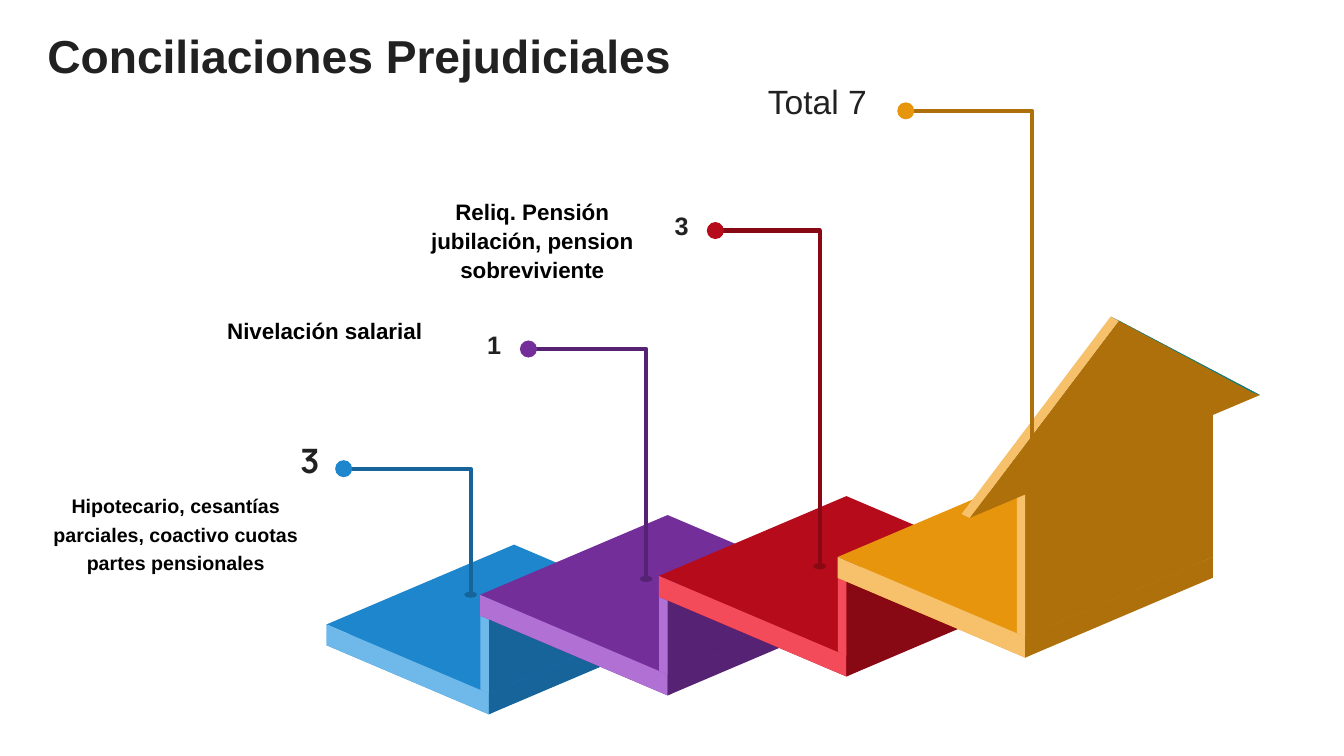
from pptx import Presentation
from pptx.dml.color import RGBColor
from pptx.enum.shapes import MSO_SHAPE
from pptx.enum.text import MSO_ANCHOR, MSO_AUTO_SIZE, PP_ALIGN
from pptx.util import Pt

OVAL = MSO_SHAPE.OVAL
TOP, BOTTOM = MSO_ANCHOR.TOP, MSO_ANCHOR.BOTTOM
LEFT, CENTER, RIGHT = PP_ALIGN.LEFT, PP_ALIGN.CENTER, PP_ALIGN.RIGHT
FIT_SHAPE = MSO_AUTO_SIZE.SHAPE_TO_FIT_TEXT
TITLE_ONLY = 5
DARK, BLACK = "212121", "000000"

presentation = Presentation()
presentation.slide_width, presentation.slide_height = Pt(960), Pt(540)
slide = presentation.slides.add_slide(presentation.slide_layouts[TITLE_ONLY])


def paint(shape, fill=None, line=None):
    """Colour a shape with hex strings; a missing colour means none."""
    shape.shadow.inherit = False
    if fill:
        shape.fill.solid()
        shape.fill.fore_color.rgb = RGBColor.from_string(fill)
    else:
        shape.fill.background()
    if line:
        shape.line.color.rgb = RGBColor.from_string(line)
        shape.line.width = Pt(3)
    else:
        shape.line.fill.background()


def draw_path(points, fill=None, line=None):
    """Draw a filled polygon, or an open path when only a line is given."""
    corners = [(Pt(x), Pt(y)) for x, y in points]
    builder = slide.shapes.build_freeform(*corners[0])
    builder.add_line_segments(corners[1:], close=fill is not None)
    paint(builder.convert_to_shape(), fill, line)


# Steps: top colour, light edge, dark side, run to the left, wall and strip heights
steps = [
    ("1D86CD", "6EB8EA", "16649A", 116, 61.5, 53.5),
    ("732E9A", "B070D4", "562374", 134, 61.5, 53.5),
    ("B50B1B", "F44B5B", "880814", 134, 61.5, 53.5),
    ("E8950E", "F6C16A", "AE700A", 134, 102, 102),
]
DEPTH, RISE, THICKNESS, EDGE = 134, 57, 14.8, 6
SLOPE = RISE / DEPTH
for index, (top, light, dark, run, wall, strip) in enumerate(steps):
    front_x, front_y = 349.2 + 127.7 * index, 495.4 - 13.5 * index
    left_x, left_y = front_x - run, front_y - run * SLOPE
    right_x, right_y = front_x + DEPTH, front_y - RISE
    back_x, back_y = left_x + DEPTH, left_y - RISE
    edge_x, edge_y = front_x - EDGE, front_y - EDGE * SLOPE
    front, left, right = (front_x, front_y), (left_x, left_y), (right_x, right_y)
    front_low = (front_x, front_y + THICKNESS)
    left_low = (left_x, left_y + THICKNESS)
    right_low = (right_x, right_y + THICKNESS)
    half = THICKNESS / 2

    draw_path([(right_x, right_y + half), front_low, left_low, (back_x, back_y + half)], top)
    draw_path([left, front, right, (back_x, back_y)], top)
    draw_path([front_low, left_low, left, front], light)
    draw_path([right, front, front_low, right_low], dark)
    draw_path([(right_x, right_y - wall), (front_x, front_y - wall), front, right], dark)
    draw_path([front, (edge_x, edge_y), (edge_x, edge_y - strip), (front_x, front_y - strip)], light)

# Arrow head on the last step
draw_path([(799.2, 229), (692.6, 370), (900, 282.2)], "AE700A")
draw_path([(692.6, 370), (686.9, 367.2), (793.4, 226.1), (799.2, 229)], "F6C16A")
draw_path([(799.2, 229), (793.4, 226.1), (894.2, 280.1), (900, 282.2)], "00808F")

# Leaders: dot centre and foot centre, in the order of the steps
leaders = [
    (245.5, 334.8, 336.2, 424.8),
    (377.5, 249.3, 461.5, 413.5),
    (511, 164.7, 585.5, 404.5),
    (647, 79.2, 737.3, 389),
]
for (top, light, dark, *sizes), (dot_x, dot_y, foot_x, foot_y) in zip(steps, leaders):
    draw_path([(dot_x, dot_y), (foot_x, dot_y), (foot_x, foot_y)], line=dark)
    for x, y, width, height, colour in (
        (foot_x, foot_y, 9, 4.3, dark),
        (dot_x, dot_y, 12.2, 12.2, top),
    ):
        oval = slide.shapes.add_shape(
            OVAL, Pt(x - width / 2), Pt(y - height / 2), Pt(width), Pt(height))
        paint(oval, colour)

# Title, numbers and labels:
# text, box, size, font, bold, colour, alignment, anchor, line spacing, wrap
NUMBER = (DARK, RIGHT, BOTTOM, None, False)
LABEL = (BLACK, CENTER, TOP, 20.5, True)
texts = [
    ("Conciliaciones Prejudiciales", (26.6, 5.8, 464.4, 52.6), 33, "Arial", True,
     DARK, LEFT, TOP, 50, False),
    ("3", (207.4, 310.3, 24.5, 36), 24, "Manrope", True, *NUMBER),
    ("Hipotecario, cesantías parciales, coactivo cuotas partes pensionales",
     (19.4, 347, 212.4, 67), 14, "Arial", True, *LABEL),
    ("Total 7 ", (540, 54, 92.9, 36), 24, "Arial", False, *NUMBER),
    ("1", (340.6, 231.8, 24.5, 28.8), 18, "Arial", True, *NUMBER),
    ("Nivelación salarial", (146.2, 223.2, 171.4, 25.2), 16, "Arial", True, *LABEL),
    ("3", (474.5, 146.9, 24.5, 28.8), 18, "Arial", True, *NUMBER),
    ("Reliq. Pensión jubilación, pension sobreviviente",
     (294.5, 138.2, 171.4, 67), 16, "Arial", True, *LABEL),
]
for index, (text, box, size, font, bold, colour, align, anchor, spacing, wrap) in enumerate(texts):
    lengths = [Pt(length) for length in box]
    if index == 0:
        shape = slide.shapes.title
        shape.left, shape.top, shape.width, shape.height = lengths
    else:
        shape = slide.shapes.add_textbox(*lengths)
    text_frame = shape.text_frame
    text_frame.text = text
    text_frame.word_wrap = wrap
    text_frame.auto_size = FIT_SHAPE
    text_frame.vertical_anchor = anchor
    if wrap:
        text_frame.margin_left = text_frame.margin_right = Pt(3.6)
        text_frame.margin_top = text_frame.margin_bottom = Pt(2.2)
    paragraph = text_frame.paragraphs[0]
    paragraph.alignment = align
    if spacing:
        paragraph.line_spacing = Pt(spacing)
    run_font = paragraph.runs[0].font
    run_font.name, run_font.size, run_font.bold = font, Pt(size), bold
    run_font.color.rgb = RGBColor.from_string(colour)

presentation.save("out.pptx")
